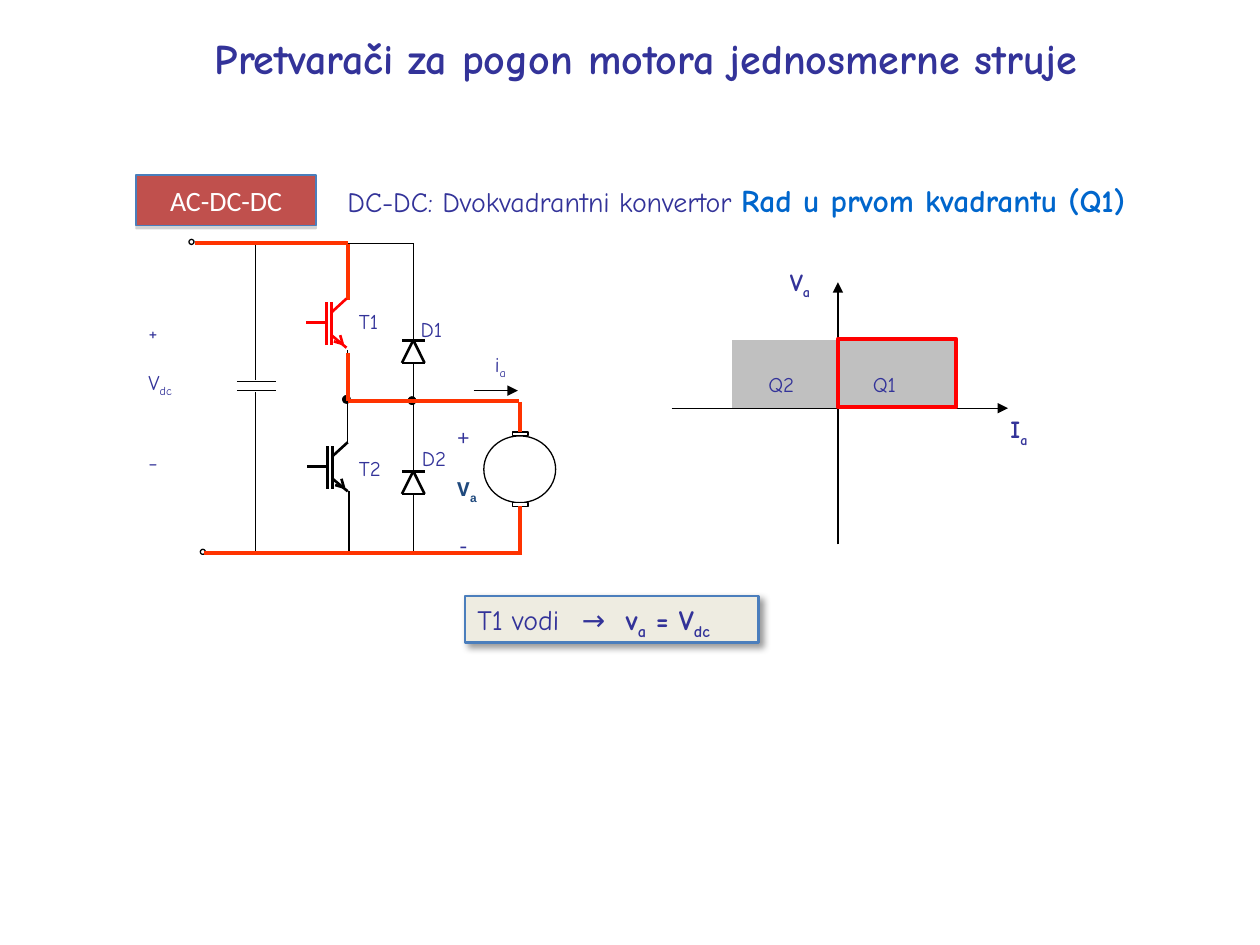
from dataclasses import dataclass
from typing import Any, Optional

from lxml.etree import SubElement
from pptx import Presentation
from pptx.dml.color import RGBColor
from pptx.enum.shapes import MSO_CONNECTOR, MSO_SHAPE
from pptx.enum.text import MSO_ANCHOR, PP_ALIGN
from pptx.oxml.ns import qn
from pptx.util import Inches, Pt

INK, BLACK, WHITE = "333399", "000000", "FFFFFF"
RED, LIVE, GREY = "FF0000", "FF3300", "C0C0C0"
MAIN = "Comic Neue"
THIN, MID, THICK = 0.75, 1.5, 2.25
RAIL_T, NODE, RAIL_B = 1.93, 3.18, 4.39
LEG_T, LEG_D, LEG_M = 2.76, 3.28, 4.13


@dataclass
class Run:
    text: str
    size: float = 12
    bold: bool = False
    sub: bool = False
    color: str = INK
    font: str = MAIN


@dataclass
class Label:
    x: float
    y: float
    w: float
    h: float
    lines: list[list[Run]]
    gaps: tuple[float, ...] = ()


@dataclass
class Wire:
    x1: float
    y1: float
    x2: float
    y2: float
    color: str = BLACK
    width: float = THIN
    arrow: bool = False


def rgb(code: str) -> RGBColor:
    return RGBColor.from_string(code)


def draw(wire: Wire) -> Any:
    line = shapes.add_connector(
        MSO_CONNECTOR.STRAIGHT,
        *map(Inches, (wire.x1, wire.y1, wire.x2, wire.y2)))
    line.line.color.rgb = rgb(wire.color)
    line.line.width = Pt(wire.width)
    props = line.element.spPr
    if wire.arrow:
        SubElement(props.find(qn("a:ln")), qn("a:tailEnd"), type="triangle")
    SubElement(props, qn("a:effectLst"))
    return line


def block(kind: MSO_SHAPE, x: float, y: float, w: float, h: float,
          fill: Optional[str], edge: Optional[str] = BLACK,
          width: float = THIN) -> Any:
    shape = shapes.add_shape(kind, *map(Inches, (x, y, w, h)))
    shape.shadow.inherit = False
    if fill:
        shape.fill.solid()
        shape.fill.fore_color.rgb = rgb(fill)
    else:
        shape.fill.background()
    if edge:
        shape.line.color.rgb = rgb(edge)
        shape.line.width = Pt(width)
    else:
        shape.line.fill.background()
    return shape


def shade(shape: Any, color: str, alpha: int, blur: float, dist: float,
          angle: int) -> None:
    """Add an outer shadow; blur and distance are in points."""
    effects = shape.element.spPr.find(qn("a:effectLst"))
    outer = SubElement(effects, qn("a:outerShdw"), blurRad=str(Pt(blur)),
                       dist=str(Pt(dist)), dir=str(angle * 60000),
                       algn="ctr", rotWithShape="0")
    tone = SubElement(outer, qn("a:srgbClr"), val=color)
    SubElement(tone, qn("a:alpha"), val=str(alpha * 1000))


def write(para: Any, runs: list[Run],
          align: PP_ALIGN = PP_ALIGN.LEFT) -> None:
    para.alignment = align
    for item in runs:
        run = para.add_run()
        run.text = item.text
        font = run.font
        font.name, font.size, font.bold = item.font, Pt(item.size), item.bold
        font.color.rgb = rgb(item.color)
        if item.sub:
            run._r.get_or_add_rPr().set("baseline", "-25000")


def label(item: Label) -> None:
    box = shapes.add_textbox(*map(Inches, (item.x, item.y, item.w, item.h)))
    frame = box.text_frame
    frame.word_wrap = True
    for i, runs in enumerate(item.lines):
        para = frame.add_paragraph() if i else frame.paragraphs[0]
        if i:
            para.space_before = Pt(item.gaps[i - 1])
        write(para, runs)


def switch(dx: float, dy: float, color: str) -> None:
    """Draw a transistor, moved from the place of T1."""
    for x1, y1, x2, y2 in (
            (2.63, 2.74, 2.63, 2.4), (2.75, 2.76, 2.63, 2.66),
            (2.75, 2.37, 2.63, 2.48), (2.59, 2.74, 2.59, 2.4),
            (2.58, 2.56, 2.43, 2.56), (2.7, 2.66, 2.72, 2.73),
            (2.72, 2.73, 2.65, 2.71)):
        draw(Wire(x1 + dx, y1 + dy, x2 + dx, y2 + dy, color, MID))


def diode(top: float) -> None:
    low, left, right = top + 0.18, LEG_D - 0.09, LEG_D + 0.09
    for ends in ((right, low, left, low), (right, low, LEG_D, top),
                 (left, low, LEG_D, top), (right, top, left, top)):
        draw(Wire(*ends, width=MID))


deck = Presentation()
deck.slide_width, deck.slide_height = Inches(10), Inches(7.5)
slide = deck.slides.add_slide(deck.slide_layouts[5])
shapes = slide.shapes

title = shapes.title
title.left, title.top, title.width, title.height = map(
    Inches, (1.01, 0.21, 8.23, 0.5))
title.text_frame.vertical_anchor = MSO_ANCHOR.TOP
write(title.text_frame.paragraphs[0],
      [Run("Pretvarači za pogon motora jednosmerne struje", 24, True)],
      PP_ALIGN.CENTER)

# Quadrant diagram
block(MSO_SHAPE.RECTANGLE, 5.81, 2.7, 1.79, 0.54, GREY, None)
draw(Wire(6.65, 4.32, 6.65, 2.24, arrow=True))
draw(Wire(5.33, 3.24, 8, 3.24, arrow=True))
block(MSO_SHAPE.RECTANGLE, 6.65, 2.69, 0.94, 0.54, None, RED, THICK)

# Motor
block(MSO_SHAPE.OVAL, 3.84, 3.46, 0.57, 0.53, WHITE)
upper, lower = (block(MSO_SHAPE.RECTANGLE, LEG_M - 0.06, y, 0.12, 0.03, WHITE)
                for y in (3.43, 3.99))

# Circuit
for ends in (
        (LEG_D, 3.92, LEG_D, RAIL_B), (LEG_D, 2.88, LEG_D, 3.74),
        (LEG_D, RAIL_T, LEG_D, 2.7), (LEG_D, RAIL_T, 1.55, RAIL_T),
        (LEG_T, 2.78, LEG_T, 3.52), (2.77, 3.9, 2.77, RAIL_B),
        (1.88, 3.03, 2.19, 3.03), (1.88, 3.1, 2.19, 3.1),
        (2.03, RAIL_T, 2.03, 3.02), (2.03, 3.11, 2.03, RAIL_B)):
    draw(Wire(*ends))
switch(0.01, 1.14, BLACK)
diode(2.7)
diode(3.74)
for x, y, size, fill in ((1.5, 1.9, 0.04, WHITE), (1.59, 4.36, 0.04, WHITE),
                         (2.72, 3.14, 0.06, BLACK), (3.24, 3.15, 0.06, BLACK)):
    block(MSO_SHAPE.OVAL, x, y, size, size, fill)

# Current path through T1
for ends in ((1.55, RAIL_T, LEG_T, RAIL_T), (LEG_T, 1.94, LEG_T, 2.38),
             (LEG_T, 2.8, LEG_T, NODE), (LEG_T, NODE, 4.12, NODE),
             (1.62, RAIL_B, 4.14, RAIL_B)):
    draw(Wire(*ends, LIVE, THICK))
switch(0, 0, RED)
draw(Wire(LEG_M, 3.19, LEG_M, 3.43, LIVE, THICK)).end_connect(upper, 0)
draw(Wire(LEG_M, 4.02, LEG_M, 4.38, LIVE, THICK)).begin_connect(lower, 2)
draw(Wire(3.76, 3.1, 4.11, 3.1, arrow=True))

# Labels
for text, x, y in (("Q1", 6.83, 2.9), ("Q2", 6, 2.9), ("T1", 2.75, 2.4),
                   ("T2", 2.75, 3.57), ("D1", 3.24, 2.46), ("D2", 3.25, 3.49)):
    label(Label(x, y, 0.47, 0.24, [[Run(text)]]))
for text, x, y in (("V", 6.17, 2.07), ("I", 7.92, 3.24)):
    label(Label(x, y, 0.67, 0.33,
                [[Run(text, 14, True), Run("a", 14, True, True)]]))
label(Label(3.83, 2.74, 0.47, 0.24, [[Run("i"), Run("a", sub=True)]]))
label(Label(1.08, 2.49, 0.47, 1.42,
            [[Run("+")], [Run("V"), Run("dc", sub=True)], [Run("−")]],
            (14, 29)))
MONO, NAVY = "Courier New", "1F497D"
label(Label(3.53, 3.32, 0.49, 0.88,
            [[Run("+", font=MONO)],
             [Run("V", bold=True, color=NAVY, font=MONO),
              Run("a", bold=True, sub=True, color=NAVY, font=MONO)],
             [Run("-", font=MONO)]], (15, 16)))
label(Label(2.66, 1.39, 6.87, 0.4,
            [[Run("DC-DC: Dvokvadrantni konvertor ", 16),
              Run("Rad u prvom kvadrantu (Q1)", 18, True, color="0066CC")]]))

# Converter type and result
tag = block(MSO_SHAPE.RECTANGLE, 1.08, 1.39, 1.43, 0.4, "C0504D", "4A7EBB")
shade(tag, "808080", 35, 0, 1.8, 90)
tag.text_frame.vertical_anchor = MSO_ANCHOR.MIDDLE
write(tag.text_frame.paragraphs[0],
      [Run("AC-DC-DC", 16, color=WHITE, font="Calibri")], PP_ALIGN.CENTER)

note = block(MSO_SHAPE.RECTANGLE, 3.69, 4.73, 2.33, 0.37, "EEECE1",
             "4B7EBC", MID)
shade(note, BLACK, 40, 4, 3, 45)
note.text_frame.vertical_anchor = MSO_ANCHOR.TOP
para = note.text_frame.paragraphs[0]
write(para, [Run("T1 vodi\t", 16), Run("→\t", 16, font="Roboto"),
             Run("v", 16, True), Run("a", 16, True, True),
             Run(" = V", 16, True), Run("dc", 16, True, True)])
tabs = SubElement(para._p.get_or_add_pPr(), qn("a:tabLst"))
for stop in (0.83, 1.18):
    SubElement(tabs, qn("a:tab"), pos=str(Inches(stop)), algn="l")

deck.save("out.pptx")
